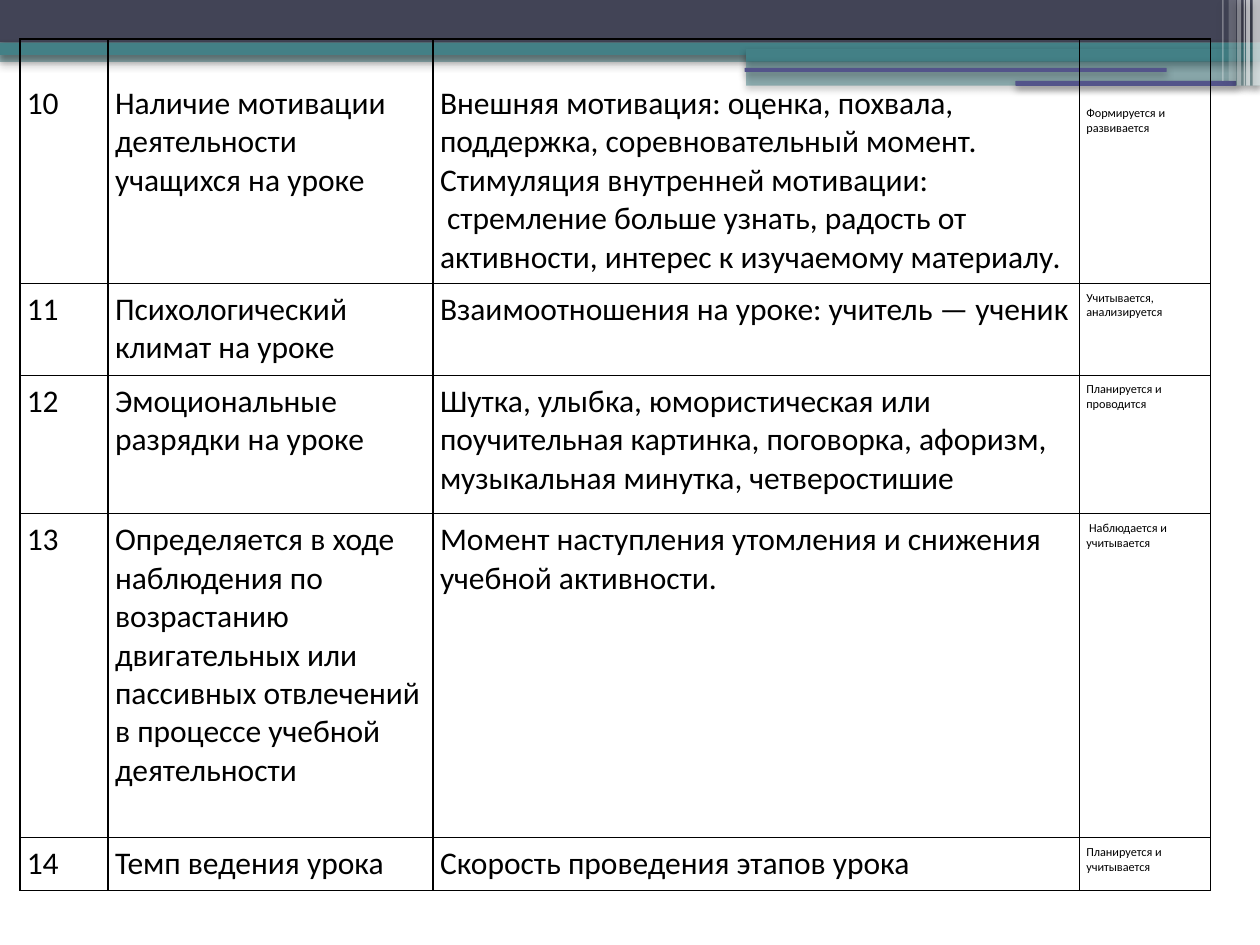
from lxml import etree
from pptx import Presentation
from pptx.dml.color import RGBColor
from pptx.enum.shapes import MSO_SHAPE
from pptx.oxml import parse_xml
from pptx.oxml.ns import qn
from pptx.util import Cm, Pt

RECT, ROUND = MSO_SHAPE.RECTANGLE, MSO_SHAPE.ROUNDED_RECTANGLE
NAVY = RGBColor(0x42, 0x44, 0x56)
TEAL = RGBColor(0x43, 0x80, 0x86)
VIOLET = RGBColor(0x53, 0x54, 0x8A)
WHITE = RGBColor(0xFF, 0xFF, 0xFF)
BLACK = RGBColor(0, 0, 0)
NS = 'xmlns:a="http://schemas.openxmlformats.org/drawingml/2006/main"'
SHADOW = (f'<a:effectLst {NS}><a:outerShdw blurRad="52070" dist="25400" dir="5400000">'
          '<a:srgbClr val="000000"><a:alpha val="40000"/></a:srgbClr>'
          '</a:outerShdw></a:effectLst>')

prs = Presentation()
prs.slide_width, prs.slide_height = Cm(25.4), Cm(19.05)
s = prs.slides.add_slide(prs.slide_layouts[6])

# Header bands and stripes: shape, left, top, width, height, colour, opacity %
BARS = [
    (RECT, 0, 1.02, 25.4, 0.23, TEAL, 50),
    (RECT, 0, 0, 25.4, 0.86, NAVY, 100),
    (RECT, 0, 0.86, 25.4, 0.25, TEAL, 100),
    (RECT, 15.04, 0.99, 10.36, 0.25, TEAL, 100),
    (RECT, 15.04, 1.22, 10.36, 0.51, TEAL, 50),
    (ROUND, 15.01, 1.37, 8.51, 0.08, VIOLET, 100),
    (ROUND, 20.47, 1.63, 4.45, 0.1, VIOLET, 100),
    (RECT, 25.25, 0, 0.15, 1.73, WHITE, 66),
    (RECT, 25.12, 0, 0.08, 1.73, WHITE, 66),
    (RECT, 25.07, 0, 0.03, 1.73, WHITE, 60),
    (RECT, 24.94, 0, 0.08, 1.73, WHITE, 40),
    (RECT, 24.77, 0, 0.15, 1.63, WHITE, 20),
    (RECT, 24.64, 0, 0.03, 1.63, WHITE, 31),
]
for kind, left, top, width, height, colour, opacity in BARS:
    bar = s.shapes.add_shape(kind, Cm(left), Cm(top), Cm(width), Cm(height))
    bar.fill.solid()
    bar.fill.fore_color.rgb = colour
    bar.line.fill.background()
    sp_pr = bar.fill._xPr
    if opacity < 100:
        clr = sp_pr.find(qn("a:solidFill"))[0]
        etree.SubElement(clr, qn("a:alpha")).set("val", str(opacity * 1000))
    sp_pr.append(parse_xml(SHADOW))

# Lesson table: one string per cell, paragraphs separated by a line break
COLS = [1.78, 6.55, 13.03, 2.64]
HEIGHTS = [4.92, 1.85, 2.79, 6.53, 1.07]
ROWS = [
    ("10", "Наличие мотивации деятельности учащихся на уроке",
     "Внешняя мотивация: оценка, похвала, поддержка, соревновательный момент. "
     "Стимуляция внутренней мотивации:\n"
     " стремление больше узнать, радость от активности, интерес к изучаемому материалу.",
     "Формируется и развивается"),
    ("11", "Психологический климат на уроке",
     "Взаимоотношения на уроке: учитель — ученик",
     "Учитывается,\nанализируется"),
    ("12", "Эмоциональные разрядки на уроке",
     "Шутка, улыбка, юмористическая или поучительная картинка, поговорка, афоризм, "
     "музыкальная минутка, четверостишие",
     "Планируется и проводится"),
    ("13", "Определяется в ходе наблюдения по возрастанию двигательных или пассивных "
     "отвлечений в процессе учебной деятельности",
     "Момент наступления утомления и снижения учебной активности.",
     " Наблюдается и учитывается"),
    ("14", "Темп ведения урока", "Скорость проведения этапов урока",
     "Планируется и учитывается"),
]
MARGIN = 0.14
FIRST_ROW_TOP = [0.91, 0.91, 0.91, 1.34]
SIZES = [18, 18, 18, 7]


def add_borders(cell):
    tc_pr = cell._tc.get_or_add_tcPr()
    for i, side in enumerate(("lnL", "lnR", "lnT", "lnB")):
        tc_pr.insert(i, parse_xml(
            f'<a:{side} {NS} w="12192"><a:solidFill><a:srgbClr val="{BLACK}"/>'
            f'</a:solidFill></a:{side}>'))


table = s.shapes.add_table(len(ROWS), len(COLS), Cm(0.4), Cm(0.79),
                           Cm(sum(COLS)), Cm(sum(HEIGHTS))).table
table.first_row = table.horz_banding = False
for col, width in zip(table.columns, COLS):
    col.width = Cm(width)

for r, (texts, height) in enumerate(zip(ROWS, HEIGHTS)):
    table.rows[r].height = Cm(height)
    for c, text in enumerate(texts):
        cell = table.cell(r, c)
        cell.fill.background()
        add_borders(cell)
        cell.margin_left = cell.margin_right = cell.margin_bottom = Cm(MARGIN)
        cell.margin_top = Cm(MARGIN if r else FIRST_ROW_TOP[c])
        cell.text = text
        for p in cell.text_frame.paragraphs:
            for name, value in {"name": "Calibri", "size": Pt(SIZES[c])}.items():
                setattr(p.runs[0].font, name, value)
            p.runs[0].font.color.rgb = BLACK

prs.save("out.pptx")
